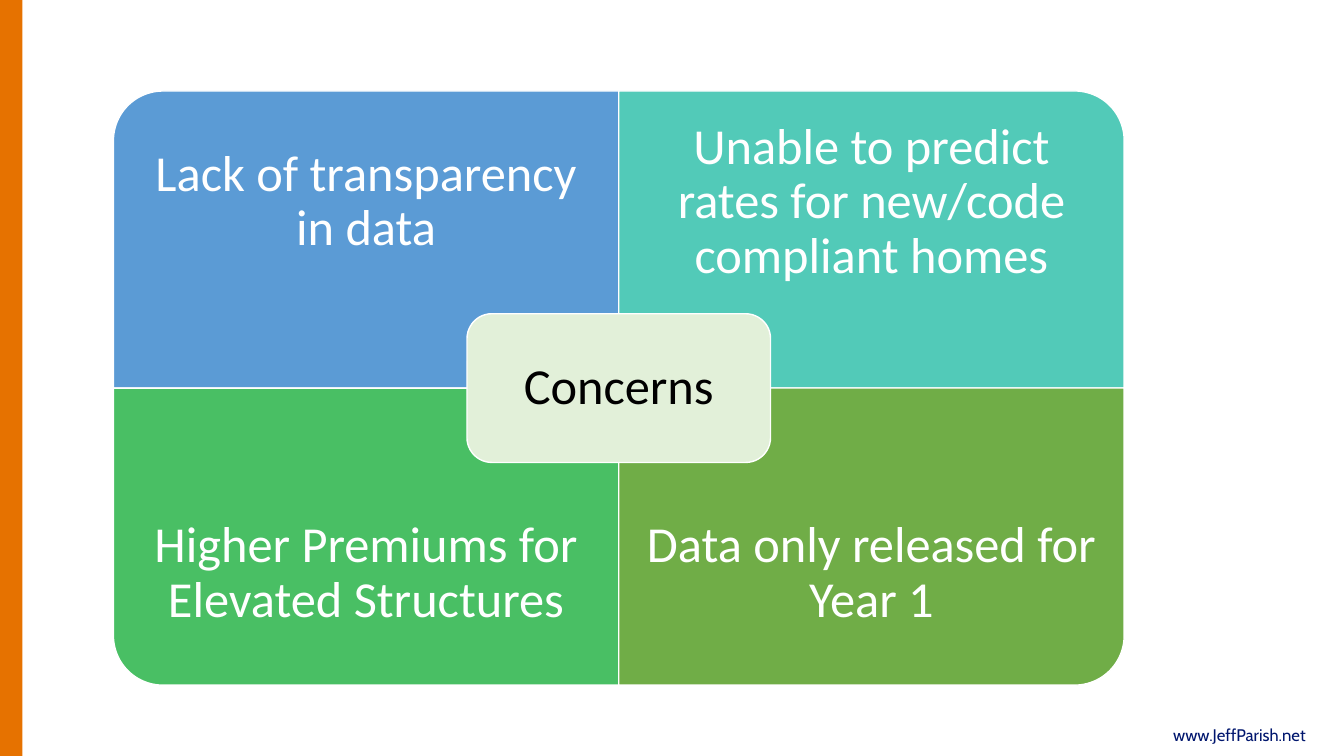
from pptx import Presentation
from pptx.dml.color import RGBColor
from pptx.enum import shapes, text
from pptx.util import Pt

WHITE = RGBColor(0xFF, 0xFF, 0xFF)
BLACK = RGBColor(0x00, 0x00, 0x00)
NAVY = RGBColor(0x00, 0x16, 0x6E)
ORANGE = RGBColor(0xE6, 0x72, 0x00)
BLUE = RGBColor(0x5B, 0x9B, 0xD5)
TEAL = RGBColor(0x52, 0xCA, 0xB8)
GREEN = RGBColor(0x49, 0xBF, 0x64)
OLIVE = RGBColor(0x70, 0xAD, 0x47)
PALE = RGBColor(0xE2, 0xF0, 0xD9)

CENTER_X, CENTER_Y = 442, 277.2
WIDTH, HEIGHT = 361, 212.2
LABEL_HEIGHT = HEIGHT * 0.75


class Painter:
    """Draws styled elements on the current page."""

    def __init__(self, page, font="Calibri", size=36):
        self.page = page
        self.font = font
        self.size = size

    def panel(self, kind, left, top, width, height, fill, outlined=True, rotation=0):
        """Add a filled shape, with a thin white outline if asked."""
        box = self.page.shapes.add_shape(kind, Pt(left), Pt(top), Pt(width), Pt(height))
        box.shadow.inherit = False
        box.rotation = rotation
        box.fill.solid()
        box.fill.fore_color.rgb = fill
        if outlined:
            box.line.color.rgb = WHITE
            box.line.width = Pt(1)
        else:
            box.line.fill.background()

    def label(self, words, left, top, width, height, color, inset, **changes):
        """Add a text box, centred both ways unless changed."""
        box = self.page.shapes.add_textbox(Pt(left), Pt(top), Pt(width), Pt(height))
        frame = box.text_frame
        frame_format = {"word_wrap": True,
                        "vertical_anchor": changes.get("anchor", text.MSO_ANCHOR.MIDDLE)}
        for side in ("left", "top", "right", "bottom"):
            frame_format[f"margin_{side}"] = Pt(inset)
        for name, value in frame_format.items():
            setattr(frame, name, value)
        para = frame.paragraphs[0]
        para.alignment = changes.get("align", text.PP_ALIGN.CENTER)
        para.line_spacing = changes.get("spacing", 0.9)
        span = para.add_run()
        span.text = words
        font_format = {"name": changes.get("font", self.font),
                       "size": Pt(changes.get("size", self.size))}
        for name, value in font_format.items():
            setattr(span.font, name, value)
        span.font.color.rgb = color

    def quadrant(self, words, column, row, fill, rotation):
        """Add one quarter of the matrix with its outer corner rounded."""
        left = CENTER_X + (column - 1) * WIDTH
        top = CENTER_Y + (row - 1) * HEIGHT
        wide, high = (HEIGHT, WIDTH) if rotation % 180 else (WIDTH, HEIGHT)
        self.panel(shapes.MSO_SHAPE.ROUND_1_RECTANGLE, left + (WIDTH - wide) / 2,
                   top + (HEIGHT - high) / 2, wide, high, fill, rotation=rotation)
        self.label(words, left, top + row * (HEIGHT - LABEL_HEIGHT),
                   WIDTH, LABEL_HEIGHT, WHITE, 20)

    def hub(self, words, width, height):
        """Add the rounded box over the middle of the matrix."""
        left, top = CENTER_X - width / 2, CENTER_Y - height / 2
        self.panel(shapes.MSO_SHAPE.ROUNDED_RECTANGLE, left, top, width, height, PALE)
        self.label(words, left + 5, top + 5, width - 10, height - 10, BLACK, 11)


def main():
    """Build the concerns slide and save it."""
    deck = Presentation()
    deck.slide_width, deck.slide_height = Pt(960), Pt(540)
    painter = Painter(deck.slides.add_slide(deck.slide_layouts[6]))
    painter.label("www.JeffParish.net", 838, 515, 114, 16, NAVY, 0, font="Cabin", size=12,
                  spacing=Pt(16.8), align=text.PP_ALIGN.LEFT, anchor=text.MSO_ANCHOR.TOP)
    painter.panel(shapes.MSO_SHAPE.RECTANGLE, 0, 0, 16, 540, ORANGE, outlined=False)
    concerns = [
        ("Lack of transparency in data", 0, 0, BLUE, 270),
        ("Unable to predict rates for new/code compliant homes", 1, 0, TEAL, 0),
        ("Higher Premiums for Elevated Structures", 0, 1, GREEN, 180),
        ("Data only released for Year 1", 1, 1, OLIVE, 90),
    ]
    for concern in concerns:
        painter.quadrant(*concern)
    painter.hub("Concerns", 216.8, 106.2)
    deck.save("out.pptx")


if __name__ == "__main__":
    main()
